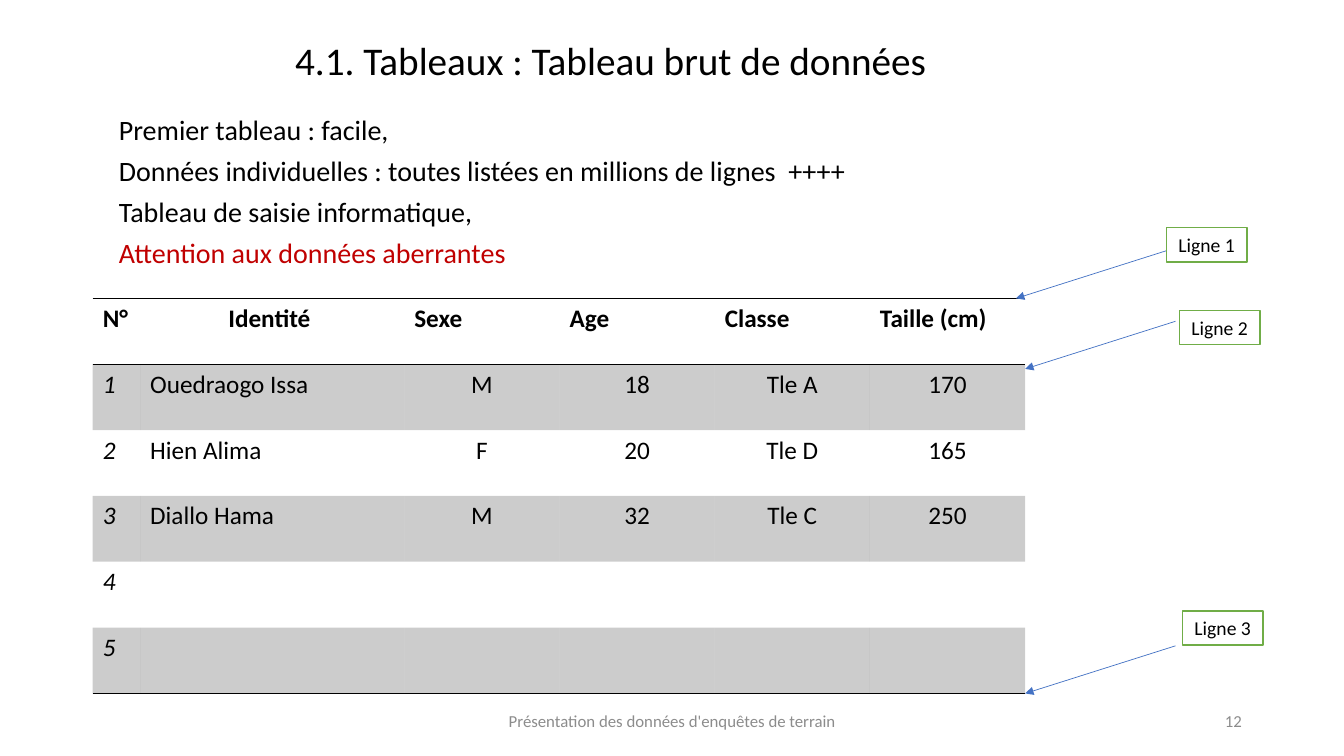
from lxml import etree
from pptx import Presentation
from pptx import util as u
from pptx.dml.color import RGBColor
from pptx.enum import shapes, text
from pptx.oxml import ns

SLIDE_WIDTH, SLIDE_HEIGHT = u.Inches(13.33), u.Inches(7.5)
COLOURS = {
    "ink": "000000",
    "warning": "C00000",
    "footer": "8C8C8C",
    "arrow": "4472C4",
    "label_line": "70AD47",
    "paper": "FFFFFF",
}
FONT = "Calibri"
NO_TABLE_STYLE = "{2D5ABB26-0587-4C30-8999-92F81FD0307C}"
LEFT, CENTRE, RIGHT = text.PP_ALIGN.LEFT, text.PP_ALIGN.CENTER, text.PP_ALIGN.RIGHT

TITLE = "4.1. Tableaux : Tableau brut de données "
REMARKS = [
    "Premier tableau : facile,",
    "Données individuelles : toutes listées en millions de lignes  ++++",
    "Tableau de saisie informatique,",
    "Attention aux données aberrantes",
]
ROWS = [
    ["N°", "Identité ", "Sexe", "Age", "Classe", "Taille (cm)"],
    ["1", "Ouedraogo Issa", "M", "18", "Tle A", "170"],
    ["2", "Hien Alima", "F", "20", "Tle D", "165"],
    ["3", "Diallo Hama", "M", "32", "Tle C", "250"],
    ["4", "", "", "", "", ""],
    ["5", "", "", "", "", ""],
]
COLUMN_SHARES = [3.53, 19.65] + [11.55] * 4
ARROW_REACH, ARROW_RISE = 11.18, 6.3
CALLOUTS = [
    ("Ligne 1", (86.78, 30.13), (75.6, 39.47)),
    ("Ligne 2", (87.75, 41.07), (76.28, 48.8)),
    ("Ligne 3", (87.98, 80.8), (76.28, 91.73)),
]


def across(share):
    """Turn a percentage of the slide width into a length."""
    return round(SLIDE_WIDTH * share / 100)


def down(share):
    """Turn a percentage of the slide height into a length."""
    return round(SLIDE_HEIGHT * share / 100)


def box(left, top, width, height):
    """Turn four percentages into a position and a size."""
    return across(left), down(top), across(width), down(height)


def colour(name):
    """Look up a named colour."""
    return RGBColor.from_string(COLOURS[name])


def format_paragraph(paragraph, size, ink="ink", align=LEFT, bold=False, italic=False):
    """Align a paragraph and format its runs."""
    paragraph.alignment = align
    for item in [paragraph, *paragraph.runs]:
        font = item.font
        font.name, font.size = FONT, u.Pt(size)
        font.bold, font.italic = bold, italic
        font.color.rgb = colour(ink)


def add_title(slide):
    """Place and format the title placeholder."""
    title = slide.shapes.title
    title.left, title.top, title.width, title.height = box(15.68, 4, 60.15, 8.67)
    title.text_frame.text = TITLE
    title.text_frame.vertical_anchor = text.MSO_ANCHOR.MIDDLE
    paragraph = title.text_frame.paragraphs[0]
    paragraph.line_spacing = 0.9
    format_paragraph(paragraph, 28, align=CENTRE)


def add_text(slide, place, content, size, ink="ink", align=LEFT, anchor=text.MSO_ANCHOR.TOP):
    """Add a wrapping text box and return its paragraphs."""
    frame = slide.shapes.add_textbox(*box(*place)).text_frame
    frame.word_wrap = True
    frame.vertical_anchor = anchor
    frame.text = content
    for paragraph in frame.paragraphs:
        format_paragraph(paragraph, size, ink, align)
    return frame.paragraphs


def add_remarks(slide):
    """Add the opening remarks, the last one as a warning."""
    paragraphs = add_text(slide, (8.1, 15.07, 66.9, 21.2), "\n".join(REMARKS), 20)
    for paragraph in paragraphs:
        paragraph.line_spacing = 0.8
        paragraph.space_before = u.Pt(10)
    format_paragraph(paragraphs[-1], 20, "warning")


def add_border(cell, edge, position):
    """Rule one edge of a cell."""
    line = etree.Element(ns.qn(f"a:{edge}"), w=str(u.Pt(1)))
    fill = etree.SubElement(line, ns.qn("a:solidFill"))
    etree.SubElement(fill, ns.qn("a:srgbClr"), val=COLOURS["ink"])
    cell._tc.get_or_add_tcPr().insert(position, line)


def shade(cell):
    """Fill a cell with ink at a fifth of its strength."""
    cell.fill.solid()
    cell.fill.fore_color.rgb = colour("ink")
    ink = cell._tc.tcPr.find(".//" + ns.qn("a:srgbClr"))
    etree.SubElement(ink, ns.qn("a:alpha"), val="20000")


def add_data_table(slide):
    """Add the raw data table with its three rules."""
    frame = slide.shapes.add_table(
        len(ROWS), len(COLUMN_SHARES), *box(6.9, 39.47, sum(COLUMN_SHARES), 52.27))
    table = frame.table
    table.horz_banding = False
    frame._element.find(".//" + ns.qn("a:tableStyleId")).text = NO_TABLE_STYLE
    for column, share in zip(table.columns, COLUMN_SHARES):
        column.width = across(share)
    for row, values in enumerate(ROWS):
        header = row == 0
        for column, value in enumerate(values):
            cell = table.cell(row, column)
            cell.text = value
            centred = column == 1 if header else column > 1
            format_paragraph(cell.text_frame.paragraphs[0], 18,
                             align=CENTRE if centred else LEFT,
                             bold=header, italic=column == 0 and not header)
            if row % 2:
                shade(cell)
            else:
                cell.fill.background()
            edges = ["lnT", "lnB"] if header else ["lnB"] if row == len(ROWS) - 1 else []
            for position, edge in enumerate(edges):
                add_border(cell, edge, position)


def add_arrow(slide, tip):
    """Add an arrow that comes down from the right to its tip."""
    x, y = tip
    arrow = slide.shapes.add_connector(
        shapes.MSO_CONNECTOR.STRAIGHT,
        across(x + ARROW_REACH), down(y - ARROW_RISE), across(x), down(y))
    arrow.line.color.rgb = colour("arrow")
    arrow.line.width = u.Pt(0.5)
    etree.SubElement(arrow.line._get_or_add_ln(), ns.qn("a:tailEnd"), type="triangle")
    etree.SubElement(arrow._element.spPr, ns.qn("a:effectLst"))


def add_label(slide, caption, corner):
    """Add a framed line label."""
    shape = slide.shapes.add_shape(shapes.MSO_SHAPE.RECTANGLE, *box(*corner, 6, 4.53))
    shape.shadow.inherit = False
    shape.fill.solid()
    shape.fill.fore_color.rgb = colour("paper")
    shape.line.color.rgb = colour("label_line")
    shape.line.width = u.Pt(1)
    shape.text_frame.text = caption
    shape.text_frame.vertical_anchor = text.MSO_ANCHOR.MIDDLE
    format_paragraph(shape.text_frame.paragraphs[0], 14, align=CENTRE)


def main():
    """Build the slide and save it."""
    presentation = Presentation()
    presentation.slide_width, presentation.slide_height = SLIDE_WIDTH, SLIDE_HEIGHT
    slide = presentation.slides.add_slide(presentation.slide_layouts.get_by_name("Title Only"))
    add_data_table(slide)
    add_title(slide)
    add_remarks(slide)
    for _, _, tip in CALLOUTS:
        add_arrow(slide, tip)
    for caption, corner, _ in CALLOUTS:
        add_label(slide, caption, corner)
    middle = text.MSO_ANCHOR.MIDDLE
    add_text(slide, (33.15, 92.67, 33.75, 5.33),
             "Présentation des données d'enquêtes de terrain", 12, "footer", CENTRE, middle)
    add_text(slide, (70.65, 92.67, 22.5, 5.33), "12", 12, "footer", RIGHT, middle)
    presentation.save("out.pptx")


if __name__ == "__main__":
    main()
